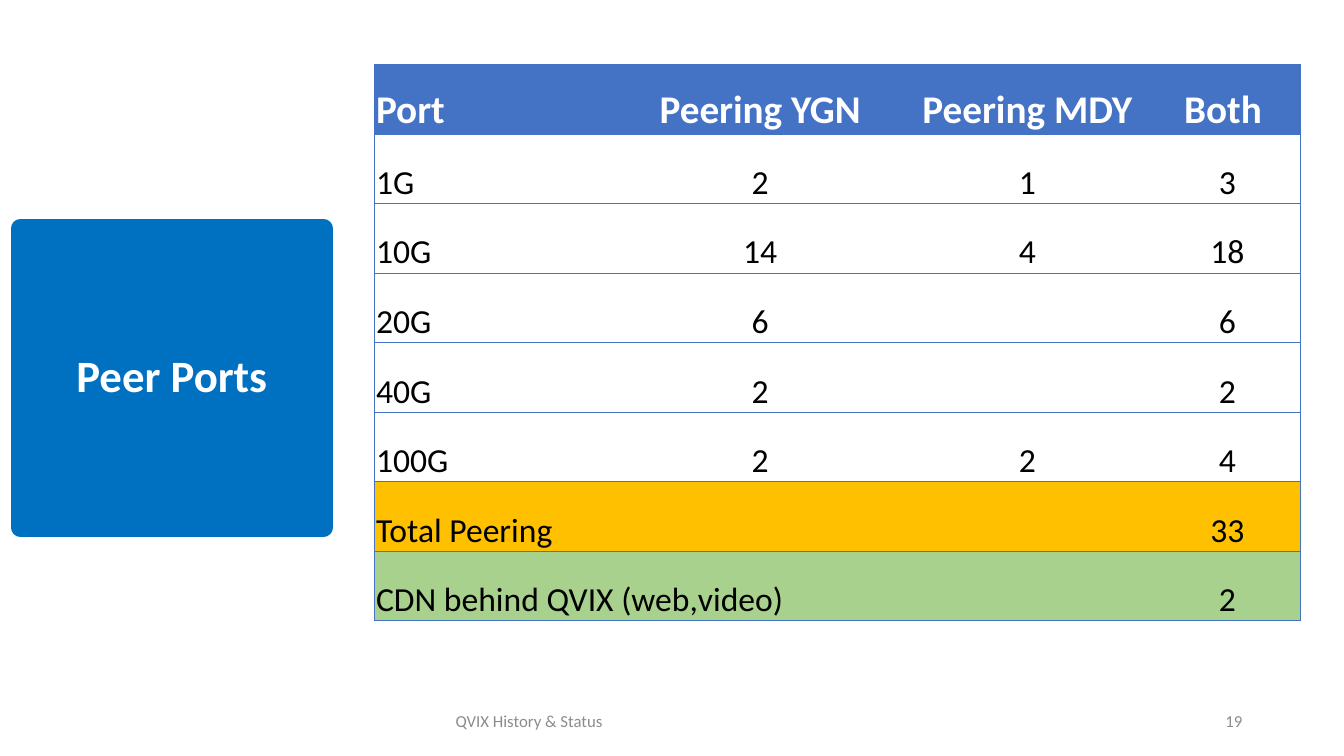
from dataclasses import dataclass

from lxml import etree
from pptx import Presentation
from pptx.dml.color import RGBColor
from pptx.enum.text import MSO_ANCHOR, PP_ALIGN
from pptx.oxml.ns import qn
from pptx.util import Inches, Pt

LEFT, CENTER, RIGHT = PP_ALIGN.LEFT, PP_ALIGN.CENTER, PP_ALIGN.RIGHT
MIDDLE, BOTTOM = MSO_ANCHOR.MIDDLE, MSO_ANCHOR.BOTTOM
TITLE_ONLY = 5
WIDTH, HEIGHT = Inches(13.33), Inches(7.5)


@dataclass(frozen=True)
class Theme:
    font: str = "Calibri"
    panel: str = "0070C0"
    header: str = "4472C4"
    total: str = "FFC000"
    cdn: str = "A9D18E"
    white: str = "FFFFFF"
    black: str = "000000"
    muted: str = "8C8C8C"
    title_size: int = 32
    header_size: int = 28
    body_size: int = 24
    footer_size: int = 12
    panel_line: float = 13.75
    rule: float = 0.5


THEME = Theme()
TABLE_AREA = (27.83, 8.53, 68.94, 73.6)
COLUMN_SHARES = (26.55, 30.25, 27.42, 15.78)
PORT_ROWS = (
    ("Port", "Peering YGN", "Peering MDY", "Both "),
    ("1G", "2", "1", "3"),
    ("10G", "14", "4", "18"),
    ("20G", "6", "", "6"),
    ("40G", "2", "", "2"),
    ("100G", "2", "2", "4"),
    ("Total Peering", "", "", "33"),
    ("CDN behind QVIX (web,video)", "", "", "2"),
)
ROW_FILLS = (THEME.header,) + (THEME.white,) * 5 + (THEME.total, THEME.cdn)
SUMMARY_ROWS = (6, 7)


def area(left, top, width, height):
    return (int(WIDTH * left / 100), int(HEIGHT * top / 100),
            int(WIDTH * width / 100), int(HEIGHT * height / 100))


def set_attrs(target, values):
    for name, value in values.items():
        setattr(target, name, value)


def write(tf, text, size, color, bold=False, **paragraph_format):
    p = tf.paragraphs[0]
    set_attrs(p, paragraph_format)
    if text:
        r = p.add_run()
        r.text = text
        set_attrs(r.font, {"name": THEME.font, "size": Pt(size), "bold": bold})
        r.font.color.rgb = RGBColor.from_string(color)


def add_title_panel(s, text):
    title = s.shapes.title
    set_attrs(title, dict(zip(("left", "top", "width", "height"),
                              area(1.5, 30.27, 22.58, 39.47))))
    color = RGBColor.from_string(THEME.panel)
    title.fill.solid()
    title.fill.fore_color.rgb = color
    title.line.color.rgb = color
    title.line.width = Pt(THEME.panel_line)
    set_attrs(title.text_frame, {"word_wrap": True, "vertical_anchor": MIDDLE})
    write(title.text_frame, text, THEME.title_size, THEME.white, True,
          alignment=CENTER, line_spacing=0.9)


def add_footer_text(s, text, left, width, alignment):
    tf = s.shapes.add_textbox(*area(left, 92.67, width, 5.33)).text_frame
    set_attrs(tf, {"word_wrap": True, "vertical_anchor": MIDDLE})
    write(tf, text, THEME.footer_size, THEME.muted,
          alignment=alignment, space_after=Pt(6))


def set_borders(cell, visible):
    tc_pr = cell._tc.get_or_add_tcPr()
    for side in "LRTB":
        ln = etree.SubElement(tc_pr, qn(f"a:ln{side}"), w=str(Pt(THEME.rule)))
        if side in visible:
            fill = etree.SubElement(ln, qn("a:solidFill"))
            etree.SubElement(fill, qn("a:srgbClr"), val=THEME.header)
        else:
            etree.SubElement(ln, qn("a:noFill"))


def format_cell(cell, text, row, col):
    last = len(COLUMN_SHARES) - 1
    outer_sides = {0: "L", last: "R"}
    set_borders(cell, "TB" + outer_sides.get(col, ""))
    cell.fill.solid()
    cell.fill.fore_color.rgb = RGBColor.from_string(ROW_FILLS[row])
    inset = Inches(0.02)
    set_attrs(cell, {"vertical_anchor": BOTTOM, "margin_left": inset,
                     "margin_right": inset, "margin_top": inset,
                     "margin_bottom": 0})
    is_header = row == 0
    write(cell.text_frame, text,
          THEME.header_size if is_header else THEME.body_size,
          THEME.white if is_header else THEME.black, is_header,
          alignment=CENTER if col else LEFT)


def add_port_table(s):
    left, top, width, height = area(*TABLE_AREA)
    table = s.shapes.add_table(len(PORT_ROWS), len(COLUMN_SHARES),
                               left, top, width, height).table
    set_attrs(table, {"first_row": False, "horz_banding": False})
    for column, share in zip(table.columns, COLUMN_SHARES):
        column.width = int(width * share / 100)
    for row, values in enumerate(PORT_ROWS):
        for col, text in enumerate(values):
            format_cell(table.cell(row, col), text, row, col)
    for row in SUMMARY_ROWS:
        table.cell(row, 0).merge(table.cell(row, 2))


def main():
    prs = Presentation()
    set_attrs(prs, {"slide_width": WIDTH, "slide_height": HEIGHT})
    s = prs.slides.add_slide(prs.slide_layouts[TITLE_ONLY])
    add_title_panel(s, "Peer Ports")
    add_footer_text(s, "QVIX History & Status", 33.16, 33.76, LEFT)
    add_footer_text(s, "19", 79.44, 13.73, RIGHT)
    add_port_table(s)
    prs.save("out.pptx")


if __name__ == "__main__":
    main()
